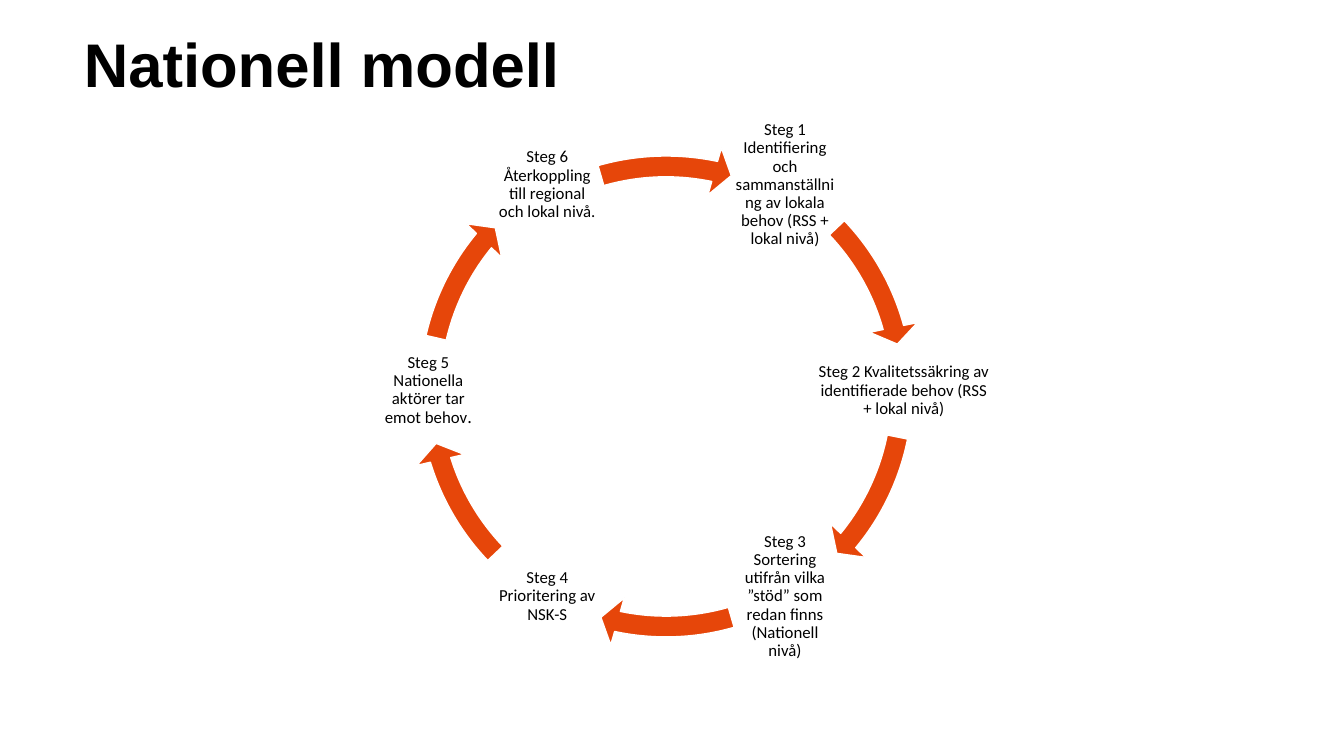
from math import cos, radians, sin

from pptx import Presentation
from pptx.dml.color import RGBColor
from pptx.enum.shapes import MSO_SHAPE as Shape
from pptx.enum.text import MSO_ANCHOR as Anchor, PP_ALIGN as Align
from pptx.util import Inches, Pt

COLS, ROWS = 16, 9
CENTRE_X, CENTRE_Y, RADIUS = 7.93, 4.65, 2.83  # ring of steps, in grid units
ARROW_SIZE = 6.2
STEP_SIZE = (1.27, 1.27)

# Runs of (text, size), box size, arrow start and end in degrees, arrow drop
STEPS = [
    ([("Steg 6 Återkoppling till regional och lokal nivå.", 12)],
     STEP_SIZE, 253.97, 281.87, 0.14),
    ([("Steg 1 Identifiering och sammanställning av lokala behov "
       "(RSS + lokal nivå)", 12)], STEP_SIZE, 316.37, 344.48, 0),
    ([("Steg 2 Kvalitetssäkring av identifierade behov (RSS + lokal nivå)", 12)],
     (2.11, 1.12), 11.35, 39.47, 0),
    ([("Steg 3 Sortering utifrån vilka ”stöd” som redan finns "
       "(Nationell nivå)", 12)], STEP_SIZE, 73.97, 101.87, 0),
    ([("Steg 4 Prioritering av NSK-S", 12)], STEP_SIZE, 136.37, 162.9, 0),
    ([("Steg 5 Nationella aktörer tar emot behov", 12), (".", 13)],
     STEP_SIZE, 192.93, 219.47, 0),
]


def rgb(value):
    return RGBColor.from_string(value)


class Deck:
    ink, accent, paper = "000000", "E6460A", "FFFFFF"
    title = {"name": "Arial", "bold": True}
    body = {"name": "Calibri", "bold": False}

    def __init__(self):
        self.prs = Presentation()
        self.prs.slide_width, self.prs.slide_height = Inches(13.33), Inches(7.5)
        self.s = self.prs.slides.add_slide(self.prs.slide_layouts[6])

    def place(self, x, y, w, h):
        """Turn columns and rows into slide lengths."""
        col, row = self.prs.slide_width / COLS, self.prs.slide_height / ROWS
        return int(x * col), int(y * row), int(w * col), int(h * row)

    def text(self, box, runs, font, frame, para):
        tf = self.s.shapes.add_textbox(*self.place(*box)).text_frame
        p = tf.paragraphs[0]
        for target, values in ((tf, {"word_wrap": True, **frame}), (p, para)):
            for key, value in values.items():
                setattr(target, key, value)
        for words, size in runs:
            r = p.add_run()
            r.text = words
            for key, value in {**font, "size": Pt(size)}.items():
                setattr(r.font, key, value)
            r.font.color.rgb = rgb(self.ink)

    def arrow(self, box, start, end):
        sp = self.s.shapes.add_shape(Shape.CIRCULAR_ARROW, *self.place(*box))
        sp.shadow.inherit = False
        sp.fill.solid()
        sp.fill.fore_color.rgb = rgb(self.accent)
        sp.line.color.rgb = rgb(self.paper)
        sp.line.width = Pt(1)
        # Angles are stored as 0.6 per degree
        for i, value in enumerate((0.04, 2.5, end * 0.6, start * 0.6, 0.047)):
            sp.adjustments[i] = value


def main():
    deck = Deck()

    # Title
    deck.text((0.88, 0.31, 13.93, 1.62), [("Nationell modell", 44)], deck.title,
              {"vertical_anchor": Anchor.TOP}, {"line_spacing": 0.95})

    # Cycle: steps every 60 degrees, each followed by its arrow
    inset = Inches(0.02)
    frame = {"vertical_anchor": Anchor.MIDDLE, "margin_left": inset,
             "margin_right": inset, "margin_top": inset, "margin_bottom": inset}
    para = {"alignment": Align.CENTER, "line_spacing": 0.9}
    for i, (runs, (w, h), start, end, drop) in enumerate(STEPS):
        angle = radians(60 * i - 120)
        x = CENTRE_X + RADIUS * cos(angle) - w / 2
        y = CENTRE_Y + RADIUS * sin(angle) - h / 2
        deck.text((x, y, w, h), runs, deck.body, frame, para)
        deck.arrow((CENTRE_X - ARROW_SIZE / 2, CENTRE_Y - ARROW_SIZE / 2 + drop,
                    ARROW_SIZE, ARROW_SIZE), start, end)

    deck.prs.save("out.pptx")


if __name__ == "__main__":
    main()
